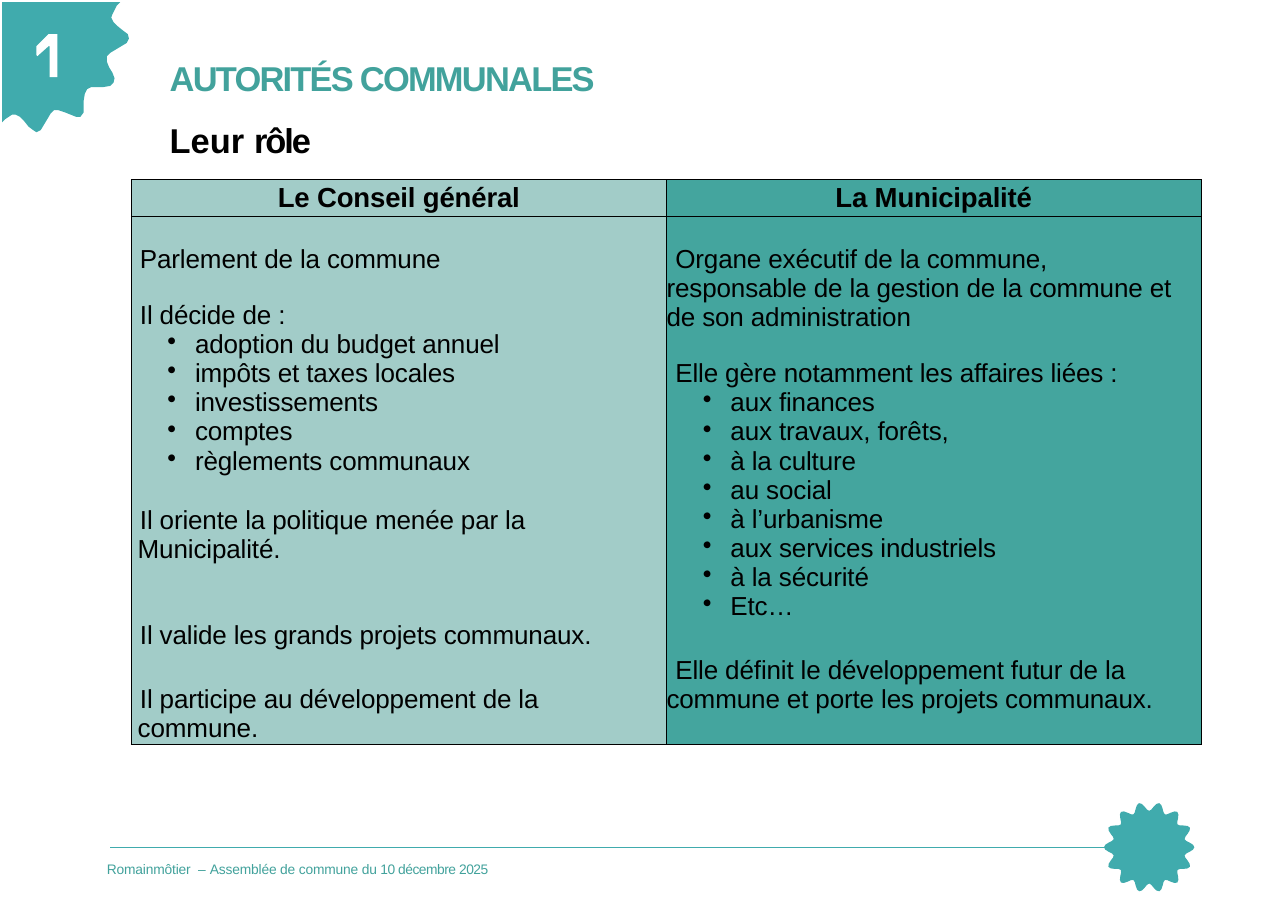
import math
from dataclasses import dataclass, field

from lxml import etree
from pptx import Presentation
from pptx import util as u
from pptx.dml.color import RGBColor
from pptx.enum import shapes, text
from pptx.oxml.ns import qn

TEAL, INK, PALE, DEEP = "42A29C", "000000", "A2CCC8", "44A59E"
BADGE = "40ABAD"

CORNER = [
    (1.09, 0.02), (0.02, 0.02), (0.02, 1.11), (0.05, 1.08), (0.08, 1.06),
    (0.11, 1.04), (0.14, 1.04), (0.18, 1.06), (0.22, 1.1), (0.26, 1.15),
    (0.3, 1.18), (0.33, 1.2), (0.37, 1.18), (0.4, 1.13), (0.43, 1.08),
    (0.46, 1.03), (0.49, 1), (0.53, 1), (0.59, 1.02), (0.64, 1.04),
    (0.69, 1.06), (0.73, 1.06), (0.76, 1.02), (0.76, 0.97), (0.76, 0.91),
    (0.77, 0.85), (0.79, 0.81), (0.83, 0.79), (0.88, 0.79), (0.94, 0.79),
    (1, 0.78), (1.03, 0.75), (1.04, 0.71), (1.02, 0.66), (0.99, 0.61),
    (0.97, 0.56), (0.97, 0.51), (1, 0.48), (1.05, 0.45), (1.1, 0.42),
    (1.15, 0.39), (1.17, 0.35), (1.16, 0.31), (1.12, 0.28), (1.07, 0.24),
    (1.03, 0.2), (1.01, 0.16), (1.02, 0.13), (1.04, 0.09), (1.06, 0.05),
]
NUMERAL = [
    (0.52, 0.31), (0.44, 0.31), (0.33, 0.42), (0.33, 0.5), (0.34, 0.51),
    (0.35, 0.5), (0.44, 0.42), (0.45, 0.42), (0.45, 0.7), (0.52, 0.7),
]

# Each line of a cell: text, space before in points; a leading • marks a bullet.
COUNCIL = [
    ("Parlement de la commune", 0),
    ("Il décide de :", 18),
    ("•adoption du budget annuel", 0),
    ("•impôts et taxes locales", 0),
    ("•investissements", 0),
    ("•comptes", 0),
    ("•règlements communaux", 0),
    ("Il oriente la politique menée par la\vMunicipalité.", 20),
]
EXECUTIVE = [
    ("Organe exécutif de la commune,\vresponsable de la gestion de la commune et "
     "de son administration", 0),
    ("Elle gère notamment les affaires liées :", 18),
    ("•aux finances", 0),
    ("•aux travaux, forêts,", 0),
    ("•à la culture", 0),
    ("•au social", 0),
    ("•à l’urbanisme", 0),
    ("•aux services industriels", 0),
    ("•à la sécurité", 0),
    ("•Etc…", 0),
]
PROJECTS = [("Il valide les grands projets communaux.", 0)]
GROWTH = [("Il participe au développement de la\vcommune.", 0)]
FUTURE = [("Elle définit le développement futur de la\v"
           "commune et porte les projets communaux.", 0)]

HEADING = {"size": 18, "bold": True, "leading": 20, "centred": True}
BODY = {"size": 17, "bold": False, "leading": 19, "centred": False}
# Each row: height, style, then top margin and lines for either column.
ROWS = [
    (0.33, HEADING, (0, [("Le Conseil général", 0)]), (0, [("La Municipalité", 0)])),
    (3.69, BODY, (0.26, COUNCIL), (0.26, EXECUTIVE)),
    (0.26, {**BODY, "leading": 18}, (0, PROJECTS), (0, [])),
    (0.8, BODY, (0.26, GROWTH), (0, FUTURE)),
]


def colour(value):
    return RGBColor.from_string(value)


def put(target, values):
    for name, value in values.items():
        setattr(target, name, value)


def wavy_disc(cx, cy, radius, wave, teeth):
    steps = teeth * 8
    for step in range(steps):
        angle = 2 * math.pi * step / steps
        reach = radius + wave * math.cos(teeth * angle)
        yield cx + reach * math.cos(angle), cy + reach * math.sin(angle)


@dataclass
class SlideWriter:
    slide: object
    font: str = "Arial"
    margins: dict = field(default_factory=lambda: dict.fromkeys(
        ("margin_left", "margin_top", "margin_right", "margin_bottom"), 0))

    def style_run(self, run, size, ink, bold=False, spacing=0):
        put(run.font, {"name": self.font, "size": u.Pt(size), "bold": bold})
        run.font.color.rgb = colour(ink)
        run.font._element.set("spc", str(round(spacing * 100)))

    def outline(self, points, fill):
        corners = [(u.Inches(x), u.Inches(y)) for x, y in points]
        builder = self.slide.shapes.build_freeform(*corners[0])
        builder.add_line_segments(corners[1:], close=True)
        patch = builder.convert_to_shape()
        patch.shadow.inherit = False
        patch.fill.solid()
        patch.fill.fore_color.rgb = colour(fill)
        patch.line.fill.background()

    def rule(self, start, end, ink, width):
        ends = [u.Inches(value) for value in (*start, *end)]
        line = self.slide.shapes.add_connector(shapes.MSO_CONNECTOR.STRAIGHT, *ends)
        line.line.color.rgb = colour(ink)
        line.line.width = u.Pt(width)
        etree.SubElement(line._element.spPr, qn("a:effectLst"))

    def words(self, box, paragraphs, size, bold=False, leading=1.0):
        """Fill a text frame; each run is a (text, colour, spacing) triple."""
        frame = box.text_frame
        put(frame, {**self.margins, "word_wrap": True,
                    "auto_size": text.MSO_AUTO_SIZE.NONE,
                    "vertical_anchor": text.MSO_ANCHOR.TOP})
        for index, runs in enumerate(paragraphs):
            line = frame.add_paragraph() if index else frame.paragraphs[0]
            put(line, {"alignment": text.PP_ALIGN.LEFT, "line_spacing": leading,
                       "space_before": u.Pt(0)})
            for wording, ink, spacing in runs:
                run = line.add_run()
                run.text = wording
                self.style_run(run, size, ink, bold, spacing)

    def title(self, at, paragraphs, size):
        heading = self.slide.shapes.title
        put(heading, dict(zip(("left", "top", "width", "height"), map(u.Inches, at))))
        self.words(heading, paragraphs, size, bold=True, leading=1.5)

    def note(self, at, runs, size):
        self.words(self.slide.shapes.add_textbox(*map(u.Inches, at)), [runs], size)

    def borders(self, cell, hidden):
        properties = cell._tc.get_or_add_tcPr()
        for side in "LRTB":
            edge = etree.SubElement(properties, qn(f"a:ln{side}"), w=str(u.Pt(0.5)))
            if side in hidden:
                etree.SubElement(edge, qn("a:noFill"))
            else:
                paint = etree.SubElement(edge, qn("a:solidFill"))
                etree.SubElement(paint, qn("a:srgbClr"), val=INK)

    def cell(self, cell, fill, lines, top, style, hang):
        put(cell, {**self.margins, "margin_top": u.Inches(top)})
        if style["centred"]:
            cell.vertical_anchor = text.MSO_ANCHOR.MIDDLE
        cell.fill.solid()
        cell.fill.fore_color.rgb = colour(fill)
        frame = cell.text_frame
        frame.paragraphs[0].line_spacing = u.Pt(style["leading"])
        for index, (wording, gap) in enumerate(lines):
            line = frame.add_paragraph() if index else frame.paragraphs[0]
            line.text = wording.lstrip("•")
            put(line, {"line_spacing": u.Pt(style["leading"]), "space_before": u.Pt(gap)})
            for run in line.runs:
                self.style_run(run, style["size"], INK, style["bold"], -0.1)
            if style["centred"]:
                line.alignment = text.PP_ALIGN.CENTER
                continue
            bullet = wording.startswith("•")
            margin, indent = (0.58, -0.25) if bullet else (hang, 0.08 - hang)
            layout = line._p.get_or_add_pPr()
            layout.set("marL", str(u.Inches(margin)))
            layout.set("indent", str(u.Inches(indent)))
            if bullet:
                etree.SubElement(layout, qn("a:buChar"), char="•")

    def table(self, left, top, widths, fills, hangs, rows):
        height = sum(row[0] for row in rows)
        grid = self.slide.shapes.add_table(
            len(rows), len(widths),
            *map(u.Inches, (left, top, sum(widths), height))).table
        put(grid, {"first_row": False, "horz_banding": False})
        for column, width in zip(grid.columns, widths):
            column.width = u.Inches(width)
        last = len(rows) - 1
        for r, (height, style, *contents) in enumerate(rows):
            grid.rows[r].height = u.Inches(height)
            hidden = ("T" if r > 1 else "") + ("B" if 0 < r < last else "")
            for c, (margin, lines) in enumerate(contents):
                cell = grid.cell(r, c)
                self.borders(cell, hidden)
                self.cell(cell, fills[c], lines, margin, style, hangs[c])


def main():
    deck = Presentation()
    put(deck, {"slide_width": u.Inches(11.69), "slide_height": u.Inches(8.26)})
    slide = deck.slides.add_slide(deck.slide_layouts[5])
    writer = SlideWriter(slide)
    writer.outline(wavy_disc(10.43, 7.69, 0.37, 0.04, 14), BADGE)
    writer.rule((1, 7.69), (10.43, 7.69), BADGE, 0.9)
    writer.outline(CORNER, BADGE)
    writer.outline(NUMERAL, "FFFFFF")
    writer.title((1.54, 0.33, 6.28, 1.07), [
        [("AUTORITÉS COMMUNALES", TEAL, -1.2)],
        [("Leur ", INK, 0), ("rôle", INK, -1.4)],
    ], 22.5)
    writer.table(1.19, 1.63, (4.86, 4.85), (PALE, DEEP), (0.06, 0), ROWS)
    writer.note((0.97, 7.81, 3.52, 0.3), [
        ("Romainmôtier  ", TEAL, -0.1), ("– ", TEAL, 0.1),
        ("Assemblée de commune du ", TEAL, -0.1), ("10 décembre 2025", TEAL, -0.3),
    ], 9)
    deck.save("out.pptx")


if __name__ == "__main__":
    main()
